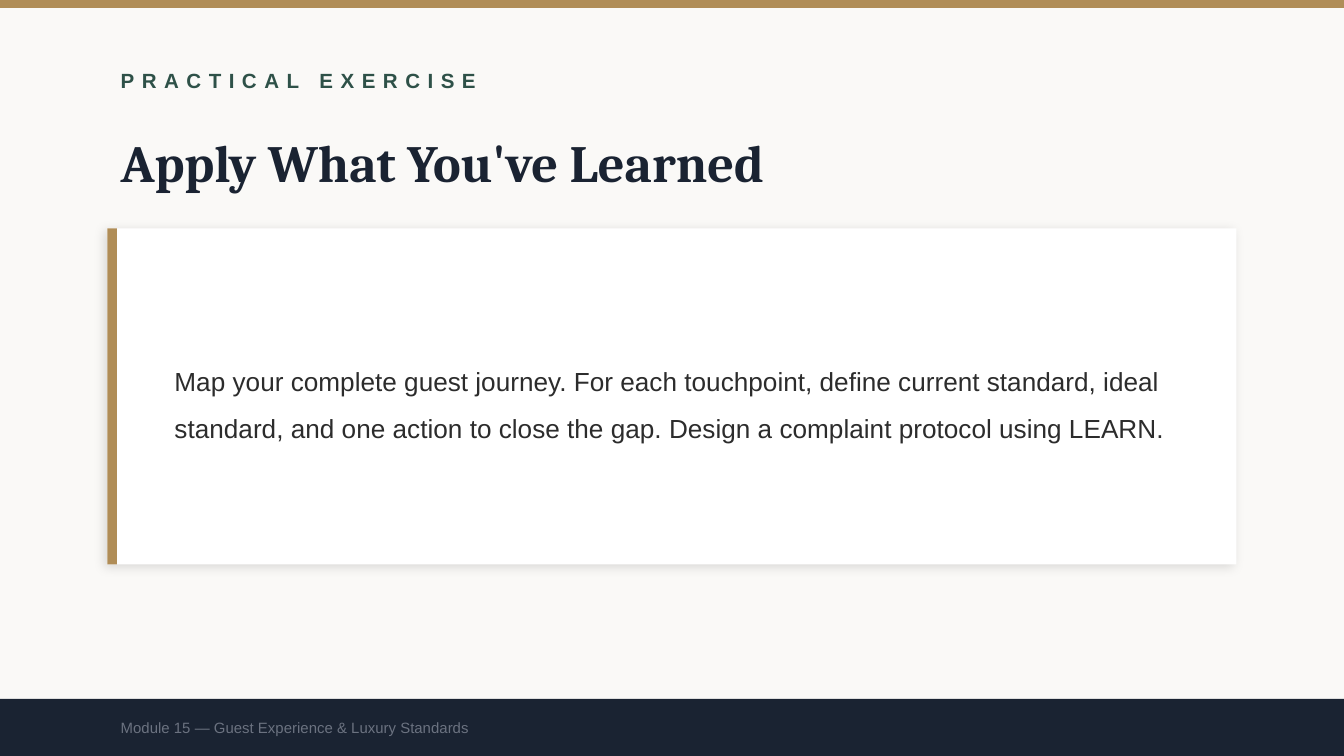
from pptx import Presentation
from pptx.dml.color import RGBColor
from pptx.enum.shapes import MSO_SHAPE
from pptx.enum.text import MSO_ANCHOR
from pptx.oxml import parse_xml
from pptx.oxml.ns import nsdecls
from pptx.util import Inches, Pt

RECTANGLE = MSO_SHAPE.RECTANGLE
MIDDLE = MSO_ANCHOR.MIDDLE

IVORY = RGBColor(0xFA, 0xF9, 0xF7)
GOLD = RGBColor(0xB0, 0x8D, 0x57)
GREEN = RGBColor(0x2E, 0x51, 0x48)
NAVY = RGBColor(0x1A, 0x23, 0x32)
WHITE = RGBColor(0xFF, 0xFF, 0xFF)
CHARCOAL = RGBColor(0x2C, 0x2C, 0x2C)
GRAY = RGBColor(0x6B, 0x72, 0x80)

SLIDE_W = 10
SLIDE_H = SLIDE_W * 9 / 16
MARGIN = 0.8
CARD_TOP, CARD_H = 1.7, 2.5
FOOTER_TOP = 5.2
FOOTER_H = SLIDE_H - FOOTER_TOP

prs = Presentation()
prs.slide_width, prs.slide_height = Inches(SLIDE_W), Inches(SLIDE_H)
slide = prs.slides.add_slide(prs.slide_layouts[6])
slide.background.fill.solid()
slide.background.fill.fore_color.rgb = IVORY


def add_block(left, top, width, height, color):
    block = slide.shapes.add_shape(
        RECTANGLE, Inches(left), Inches(top), Inches(width), Inches(height))
    block.shadow.inherit = False
    block.fill.solid()
    block.fill.fore_color.rgb = color
    block.line.fill.background()
    return block


def add_text(left, top, width, height, text, font_name, size, color, bold=False):
    """Add a vertically centred one-paragraph text box and return the paragraph."""
    box = slide.shapes.add_textbox(
        Inches(left), Inches(top), Inches(width), Inches(height))
    frame = box.text_frame
    frame.word_wrap = True
    frame.vertical_anchor = MIDDLE
    frame.text = text
    paragraph = frame.paragraphs[0]
    font = paragraph.runs[0].font
    font.name, font.size, font.bold = font_name, Pt(size), bold
    font.color.rgb = color
    return paragraph


# Header
add_block(0, 0, SLIDE_W, 0.06, GOLD)
eyebrow = add_text(MARGIN, 0.4, 8, 0.4, "PRACTICAL EXERCISE", "Arial", 11, GREEN, bold=True)
eyebrow.runs[0].font._element.set("spc", "400")
add_text(MARGIN, 0.9, 8, 0.6, "Apply What You've Learned", "Cambria", 28, NAVY, bold=True)

# Exercise card with a soft shadow and a gold edge
card = add_block(MARGIN, CARD_TOP, SLIDE_W - 2 * MARGIN, CARD_H, WHITE)
effects = card._element.spPr.find("{*}effectLst")
effects.append(parse_xml(
    f'<a:outerShdw {nsdecls("a")} blurRad="{Pt(6)}" dist="{Pt(2)}" dir="{135 * 60000}"'
    ' algn="bl" rotWithShape="0">'
    '<a:srgbClr val="000000"><a:alpha val="12000"/></a:srgbClr></a:outerShdw>'))
add_block(MARGIN, CARD_TOP, 0.07, CARD_H, GOLD)
task = add_text(
    1.2, CARD_TOP + 0.2, 7.7, CARD_H - 0.4,
    "Map your complete guest journey. For each touchpoint, define current standard, "
    "ideal standard, and one action to close the gap. "
    "Design a complaint protocol using LEARN.",
    "Arial", 14, CHARCOAL)
task.line_spacing = 1.5

# Footer
add_block(0, FOOTER_TOP, SLIDE_W, FOOTER_H, NAVY)
add_text(MARGIN, FOOTER_TOP, 8, FOOTER_H,
         "Module 15 — Guest Experience & Luxury Standards", "Arial", 8, GRAY)

prs.save("out.pptx")
